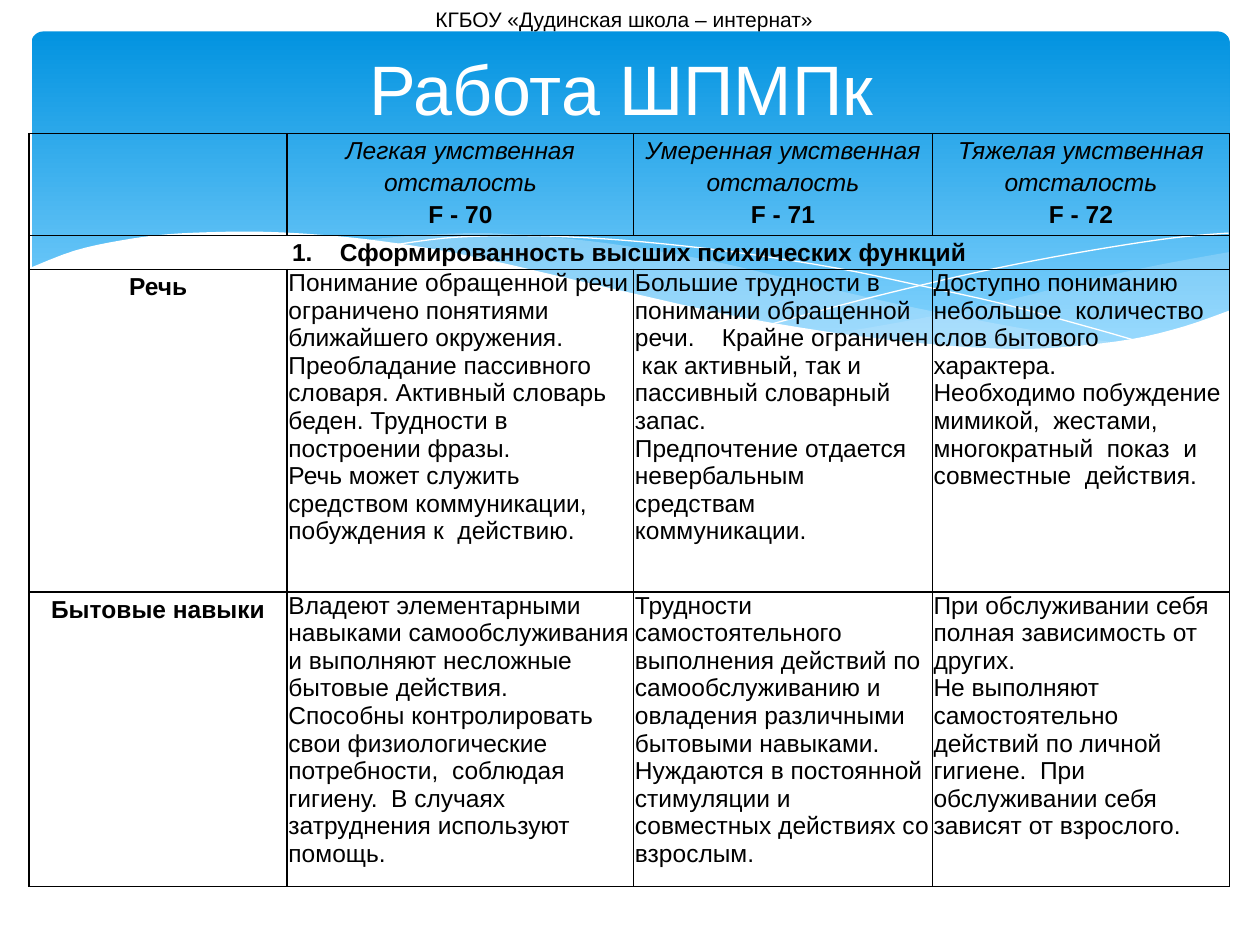
from dataclasses import dataclass

from lxml.etree import SubElement
from pptx import Presentation
from pptx.dml.color import RGBColor
from pptx.enum.shapes import MSO_SHAPE as Shape
from pptx.enum.text import MSO_ANCHOR as Anchor, MSO_AUTO_SIZE as AutoSize, PP_ALIGN as Align
from pptx.oxml.ns import qn
from pptx.util import Inches, Pt


@dataclass(frozen=True)
class Theme:
    """Colours, font and type sizes of the slide."""
    font: str = "Arial"
    ink: str = "000000"
    white: str = "FFFFFF"
    sky_top: str = "0293E0"
    sky_bottom: str = "83D3FE"
    mist: str = "C6E7FC"
    title: int = 40
    body: int = 14
    caption: int = 12


THEME = Theme()

SCHOOL = "КГБОУ «Дудинская школа – интернат»"
TITLE = "Работа ШПМПк"
SECTION = "Сформированность высших психических функций"
DEGREES = [
    (["Легкая умственная", "отсталость"], "F - 70"),
    (["Умеренная умственная отсталость"], "F - 71"),
    (["Тяжелая умственная отсталость"], "F - 72"),
]
SKILLS = [
    ("Речь", [
        ["Понимание обращенной речи ограничено понятиями ближайшего окружения.",
         "Преобладание пассивного словаря. Активный словарь беден. Трудности в построении фразы.",
         "Речь может служить средством коммуникации, побуждения к  действию."],
        ["Большие трудности в понимании обращенной речи.    Крайне ограничен  как активный, "
         "так и пассивный словарный запас.",
         "Предпочтение отдается невербальным средствам коммуникации."],
        ["Доступно пониманию небольшое  количество  слов бытового характера.",
         "Необходимо побуждение  мимикой,  жестами, многократный  показ  и  совместные  действия."],
    ]),
    ("Бытовые навыки", [
        ["Владеют элементарными навыками самообслуживания и выполняют несложные бытовые действия.",
         "Способны контролировать свои физиологические потребности,  соблюдая гигиену.  "
         "В случаях затруднения используют помощь."],
        ["Трудности самостоятельного  выполнения действий по самообслуживанию и овладения "
         "различными бытовыми навыками.",
         "Нуждаются в постоянной стимуляции и совместных действиях со взрослым."],
        ["При обслуживании себя полная зависимость от других.",
         "Не выполняют самостоятельно действий по личной гигиене.  "
         "При обслуживании себя зависят от взрослого."],
    ]),
]
COLUMNS = [2.05, 2.75, 2.37, 2.36]
ROWS = [0.81, 0.27, 2.56, 2.33]

RIGHT_WAVE = [
    [(9.76, 2), (9.21, 2.1), (8.61, 2.23), (8.05, 2.37), (7.29, 2.53), (6.61, 2.65)],
    [(6.61, 2.65), (7.05, 2.71), (7.57, 2.76), (8.03, 2.78), (8.54, 2.76), (8.97, 2.7),
     (9.35, 2.62), (9.76, 2.47)],
]
MIDDLE_WAVE = [
    [(8.93, 2.73), (8.37, 2.65), (7.75, 2.54), (7.06, 2.4), (6.29, 2.22), (5.69, 2.08),
     (5.14, 1.98), (4.65, 1.91), (4.2, 1.87), (3.8, 1.85), (3.28, 1.87), (2.86, 1.91)],
    [(2.86, 1.91), (3.42, 1.99), (4.04, 2.11), (4.49, 2.22), (5.3, 2.4), (6.01, 2.55),
     (6.65, 2.66), (7.22, 2.74), (7.73, 2.77), (8.18, 2.78), (8.57, 2.77), (8.93, 2.73)],
]
FALLING_LINE = [
    [(3.09, 1.95), (3.53, 1.89), (4.01, 1.87), (4.5, 1.88), (5.1, 1.92), (5.82, 2),
     (6.65, 2.13), (7.27, 2.26), (7.95, 2.41), (8.69, 2.61), (9.07, 2.72)],
]
RISING_LINE = [
    [(6.13, 2.57), (6.72, 2.41), (7.2, 2.29), (7.76, 2.16), (8.36, 2.04), (8.95, 1.94),
     (9.38, 1.88), (9.75, 1.85)],
]
WHITE_WAVE = [
    [(9.77, 2.46), (9.4, 2.59), (8.99, 2.69), (8.5, 2.75), (8.09, 2.77), (7.61, 2.75),
     (7.08, 2.7), (6.48, 2.62), (5.79, 2.5), (5.03, 2.33), (4.47, 2.2), (3.91, 2.07),
     (3.4, 1.97), (2.92, 1.9), (2.5, 1.86), (2.11, 1.84), (1.77, 1.84), (1.32, 1.86),
     (0.95, 1.91), (0.59, 1.99), (0.23, 2.13)],
    [(0.23, 3.29), (9.77, 3.29)],
]


def color(value):
    """Turn a hex string into a colour."""
    return RGBColor.from_string(value)


def write(frame, text, size=THEME.body, ink=THEME.ink, bold=False, italic=False,
          align=Align.LEFT, spacing=1.0):
    """Add one formatted paragraph to a text frame and return it."""
    paragraph = frame.add_paragraph() if frame.text else frame.paragraphs[0]
    paragraph.alignment, paragraph.line_spacing = align, spacing
    paragraph.space_before = paragraph.space_after = Pt(0)
    run = paragraph.add_run()
    run.text = text
    font = run.font
    font.name, font.size, font.bold, font.italic = THEME.font, Pt(size), bold, italic
    font.color.rgb = color(ink)
    return paragraph


def smooth(knots, steps=4):
    """Return points of a Catmull-Rom curve through the knots."""
    padded = [knots[0], *knots, knots[-1]]
    points = [knots[0]]
    for a, b, c, d in zip(padded, padded[1:], padded[2:], padded[3:]):
        for step in range(1, steps + 1):
            t = step / steps
            points.append(tuple(
                (2 * q + (r - p) * t + (2 * p - 5 * q + 4 * r - s) * t ** 2
                 + (3 * q - p - 3 * r + s) * t ** 3) / 2
                for p, q, r, s in zip(a, b, c, d)))
    return points


def add_wave(slide, curves, fill=None, opacity=100):
    """Draw a filled wave, or a hairline when no fill is given."""
    points = [(Inches(x), Inches(y)) for curve in curves for x, y in smooth(curve)]
    builder = slide.shapes.build_freeform(*points[0])
    builder.add_line_segments(points[1:], close=fill is not None)
    wave = builder.convert_to_shape()
    wave.shadow.inherit = False
    if fill is None:
        wave.fill.background()
        wave.line.color.rgb = color(THEME.white)
        wave.line.width = Pt(0)
        return
    wave.line.fill.background()
    wave.fill.solid()
    wave.fill.fore_color.rgb = color(fill)
    if opacity < 100:
        tint = wave.element.spPr.find(qn("a:solidFill"))[0]
        SubElement(tint, qn("a:alpha"), val=str(opacity * 1000))


def add_sky(slide, left, top, width, height):
    """Draw the gradient panel with its waves."""
    sky = slide.shapes.add_shape(Shape.ROUNDED_RECTANGLE, left, top, width, height)
    sky.adjustments[0] = 0.034
    sky.shadow.inherit = False
    sky.line.fill.background()
    sky.fill.gradient()
    sky.fill.gradient_angle = 270
    stops = [(0, THEME.sky_top), (0.9, THEME.sky_bottom)]
    for stop, (position, shade) in zip(sky.fill.gradient_stops, stops):
        stop.position, stop.color.rgb = position, color(shade)
    add_wave(slide, RIGHT_WAVE, THEME.mist, 29)
    add_wave(slide, MIDDLE_WAVE, THEME.mist, 40)
    add_wave(slide, FALLING_LINE)
    add_wave(slide, RISING_LINE)
    add_wave(slide, WHITE_WAVE, THEME.white)


def add_title(slide, left, top, width, height):
    """Place the title above the sky."""
    title = slide.shapes.title
    slide.shapes.element.append(title.element)
    title.left, title.top, title.width, title.height = left, top, width, height
    frame = title.text_frame
    frame.word_wrap, frame.auto_size = False, AutoSize.SHAPE_TO_FIT_TEXT
    frame.vertical_anchor = Anchor.TOP
    write(frame, TITLE, size=THEME.title, ink=THEME.white, align=Align.CENTER)


def add_school(slide, left, top, width, height):
    """Place the school name at the top edge."""
    frame = slide.shapes.add_textbox(left, top, width, height).text_frame
    frame.word_wrap = True
    write(frame, SCHOOL, size=THEME.caption, align=Align.CENTER)


def frame_cell(cell):
    """Give a cell thin borders, narrow margins and no fill."""
    cell.margin_left = cell.margin_right = Inches(0.01)
    cell.margin_top = cell.margin_bottom = 0
    properties = cell._tc.get_or_add_tcPr()
    for side in "LRTB":
        border = SubElement(properties, qn(f"a:ln{side}"), w=str(Pt(1)))
        SubElement(SubElement(border, qn("a:solidFill")), qn("a:srgbClr"), val=THEME.ink)
    cell.fill.background()


def add_skills_table(slide, left, top, width, height):
    """Build the table of skills by degree."""
    table = slide.shapes.add_table(len(ROWS), len(COLUMNS), left, top, width, height).table
    table.first_row = table.horz_banding = False
    for column, size in zip(table.columns, COLUMNS):
        column.width = Inches(size)
    for row, size in zip(table.rows, ROWS):
        row.height = Inches(size)
    for cell in table.iter_cells():
        frame_cell(cell)
    heading = dict(align=Align.CENTER, spacing=1.15)
    for index, (names, code) in enumerate(DEGREES, 1):
        frame = table.cell(0, index).text_frame
        for name in names:
            write(frame, name, italic=True, **heading)
        write(frame, code, bold=True, **heading)
    section = table.cell(1, 0)
    section.merge(table.cell(1, len(COLUMNS) - 1))
    numbered = write(section.text_frame, SECTION, bold=True, **heading)._p.get_or_add_pPr()
    numbered.set("marL", str(Inches(0.38)))
    numbered.set("indent", str(Inches(-0.38)))
    SubElement(numbered, qn("a:buFont"), typeface=THEME.font)
    SubElement(numbered, qn("a:buAutoNum"), type="arabicPeriod")
    for row, (skill, descriptions) in enumerate(SKILLS, 2):
        write(table.cell(row, 0).text_frame, skill, bold=True, **heading)
        for column, sentences in enumerate(descriptions, 1):
            for sentence in sentences:
                write(table.cell(row, column).text_frame, sentence)


def main():
    """Build and save the slide."""
    deck = Presentation()
    deck.slide_width, deck.slide_height = Inches(10), Inches(7.5)
    slide = deck.slides.add_slide(deck.slide_layouts[5])
    add_sky(slide, Inches(0.25), Inches(0.25), Inches(9.51), Inches(2.7))
    add_title(slide, Inches(2.81), Inches(0.31), Inches(4.24), Inches(0.77))
    add_skills_table(slide, Inches(0.23), Inches(1.06), Inches(9.53), Inches(5.97))
    add_school(slide, Inches(0.23), Inches(0), Inches(9.45), Inches(0.3))
    deck.save("out.pptx")


if __name__ == "__main__":
    main()
